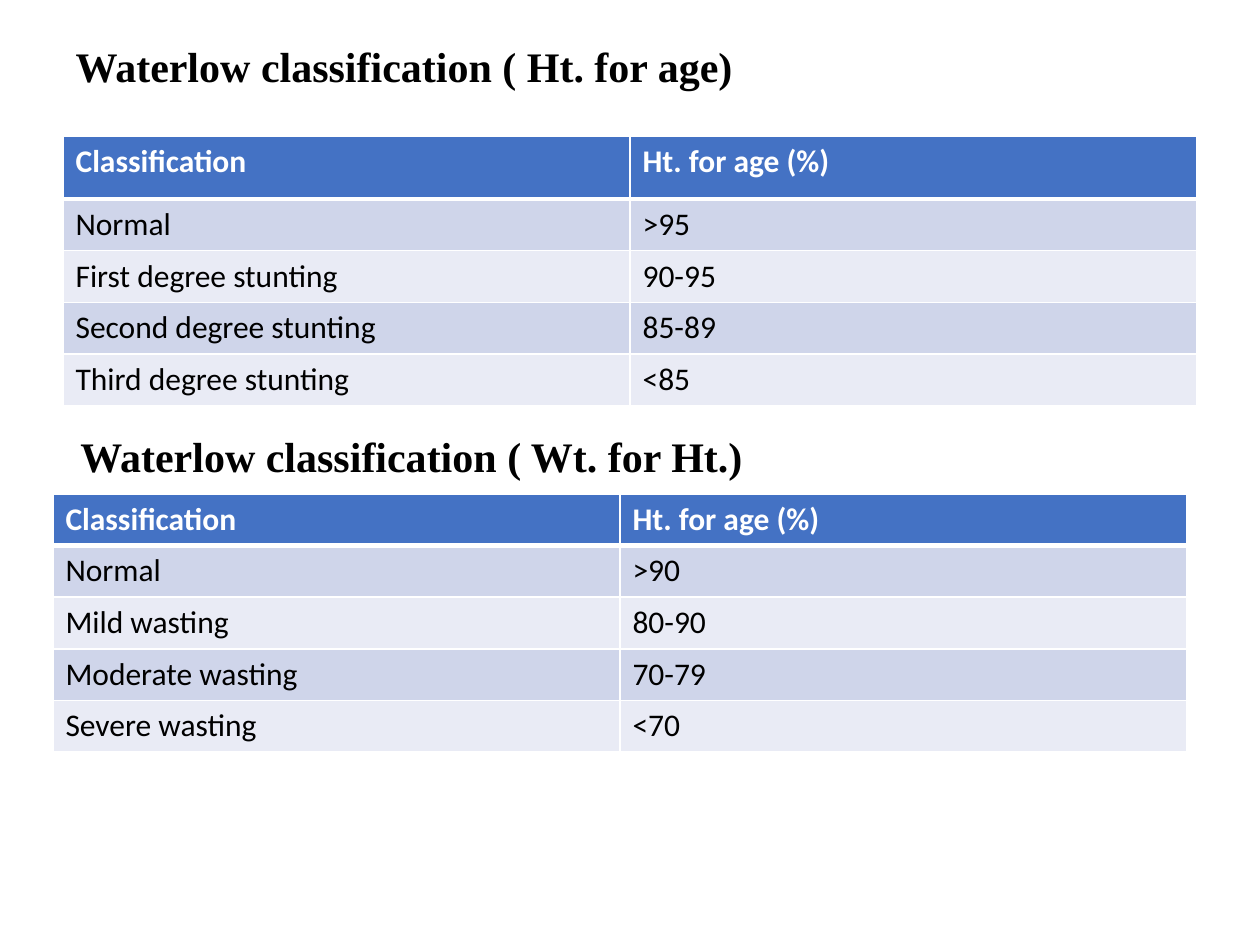
import pptx
import pptx.util
import pptx.dml.color
import pptx.enum.text
import pptx.oxml
import pptx.oxml.ns
from pptx.util import Inches

COLORS = {
    "heading": "000000",
    "header_fill": "4472C4",
    "header_text": "FFFFFF",
    "body_text": "000000",
    "band_dark": "CFD5EA",
    "band_light": "E9EBF5",
    "border": "FFFFFF",
}
HEADING = {"name": "Times New Roman", "size": pptx.util.Pt(24), "bold": True}
HEADER_CELL = {"name": "Calibri", "size": pptx.util.Pt(18), "bold": True}
BODY_CELL = {**HEADER_CELL, "bold": False}

HEIGHT_FOR_AGE = [
    ("Classification", "Ht. for age (%)"),
    ("Normal", ">95"),
    ("First degree stunting", "90-95"),
    ("Second degree stunting", "85-89"),
    ("Third degree stunting", "<85"),
]
WEIGHT_FOR_HEIGHT = [
    ("Classification", "Ht. for age (%)"),
    ("Normal", ">90"),
    ("Mild wasting", "80-90"),
    ("Moderate wasting", "70-79"),
    ("Severe wasting", "<70"),
]
ROW_HEIGHT = 0.41


def rgb(key):
    return pptx.dml.color.RGBColor.from_string(COLORS[key])


def write(paragraph, words, formats, color):
    run = paragraph.add_run()
    run.text = words
    for attribute, value in formats.items():
        setattr(run.font, attribute, value)
    run.font.color.rgb = rgb(color)


def set_borders(cell, top, bottom):
    properties = cell._tc.get_or_add_tcPr()
    for side, points in (("L", 1), ("R", 1), ("T", top), ("B", bottom)):
        properties.append(pptx.oxml.parse_xml(
            f'<a:ln{side} {pptx.oxml.ns.nsdecls("a")} w="{pptx.util.Pt(points)}">'
            f'<a:solidFill><a:srgbClr val="{COLORS["border"]}"/></a:solidFill>'
            f'</a:ln{side}>'))


def place(shape, box):
    for attribute, length in zip(("left", "top", "width", "height"), box):
        setattr(shape, attribute, Inches(length))


def add_title(slide, box, words):
    title = slide.shapes.title
    place(title, box)
    title.text_frame.vertical_anchor = pptx.enum.text.MSO_ANCHOR.MIDDLE
    paragraph = title.text_frame.paragraphs[0]
    paragraph.alignment = pptx.enum.text.PP_ALIGN.LEFT
    paragraph.line_spacing = 0.9
    write(paragraph, words, HEADING, "heading")


def add_subheading(slide, box, words):
    frame = slide.shapes.add_textbox(*map(Inches, box)).text_frame
    frame.word_wrap = False
    frame.auto_size = pptx.enum.text.MSO_AUTO_SIZE.SHAPE_TO_FIT_TEXT
    write(frame.paragraphs[0], words, HEADING, "heading")


def add_classification(slide, box, rows, header_height):
    table = slide.shapes.add_table(len(rows), len(rows[0]), *map(Inches, box)).table
    for r, row in enumerate(rows):
        table.rows[r].height = Inches(ROW_HEIGHT if r else header_height)
        if r == 0:
            formats, text_color, fill = HEADER_CELL, "header_text", "header_fill"
        else:
            formats, text_color = BODY_CELL, "body_text"
            fill = "band_dark" if r % 2 else "band_light"
        for c, words in enumerate(row):
            cell = table.cell(r, c)
            # A thick rule separates the header from the body
            set_borders(cell, top=3 if r == 1 else 1, bottom=3 if r == 0 else 1)
            cell.fill.solid()
            cell.fill.fore_color.rgb = rgb(fill)
            write(cell.text_frame.paragraphs[0], words, formats, text_color)


def main():
    presentation = pptx.Presentation()
    presentation.slide_width = Inches(10)
    presentation.slide_height = Inches(7.5)
    slide = presentation.slides.add_slide(presentation.slide_layouts[5])

    # Height for age
    add_title(slide, (0.5, 0.17, 5.58, 0.75), "Waterlow classification ( Ht. for age)")
    add_classification(slide, (0.5, 1.08, 9, 2.12), HEIGHT_FOR_AGE, 0.5)

    # Weight for height
    add_subheading(slide, (0.54, 3.37, 5.51, 0.5), "Waterlow classification ( Wt. for Ht.)")
    add_classification(slide, (0.42, 3.92, 9, 2.05), WEIGHT_FOR_HEIGHT, ROW_HEIGHT)

    presentation.save("out.pptx")


if __name__ == "__main__":
    main()
